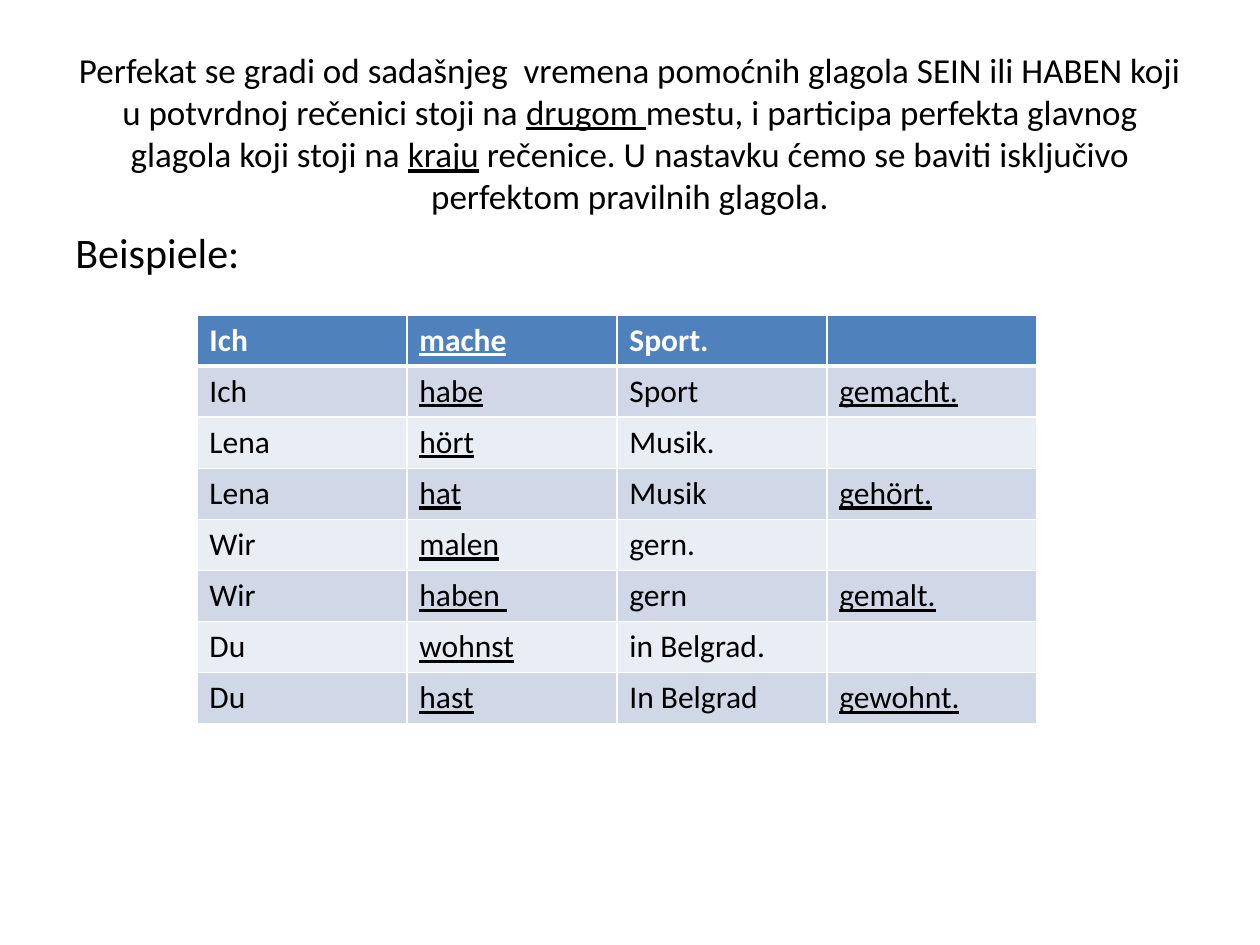
"""Build a slide on the German perfect tense with a table of examples."""
from dataclasses import dataclass

from lxml.etree import SubElement
from pptx import Presentation
from pptx.dml.color import RGBColor as RGB
from pptx.enum.text import MSO_ANCHOR as Anchor, MSO_AUTO_SIZE as AutoSize, PP_ALIGN as Align
from pptx.oxml.ns import qn
from pptx.util import Pt


@dataclass(frozen=True)
class Theme:
    font: str = "Calibri"
    black: RGB = RGB(0, 0, 0)
    white: RGB = RGB(255, 255, 255)
    header: RGB = RGB.from_string("4F81BD")
    bands: tuple = (RGB.from_string("E9EDF4"), RGB.from_string("D0D8E8"))
    title_size: Pt = Pt(20)
    label_size: Pt = Pt(24)
    cell_size: Pt = Pt(18)


THEME = Theme()


def set_font(p, size, color, bold=False):
    p.font.name, p.font.size, p.font.bold = THEME.font, size, bold
    p.font.color.rgb = color


def add_border(cell, side, width):
    ln = SubElement(cell._tc.get_or_add_tcPr(), qn(f"a:ln{side}"), w=str(Pt(width)))
    SubElement(SubElement(ln, qn("a:solidFill")), qn("a:srgbClr"), val=str(THEME.white))


prs = Presentation()
prs.slide_width, prs.slide_height = Pt(720), Pt(540)
s = prs.slides.add_slide(prs.slide_layouts[5])

title = s.shapes.title
title.left, title.top, title.width, title.height = Pt(36), Pt(21.6), Pt(648), Pt(108)
tf = title.text_frame
tf.word_wrap, tf.auto_size, tf.vertical_anchor = True, AutoSize.NONE, Anchor.MIDDLE
p = tf.paragraphs[0]
p.alignment = Align.CENTER
set_font(p, THEME.title_size, THEME.black)
title_runs = [
    ("Perfekat se gradi od sadašnjeg  vremena pomoćnih glagola SEIN ili HABEN koji "
     "u potvrdnoj rečenici stoji na ", False),
    ("drugom ", True),
    ("mestu, i participa perfekta glavnog glagola koji stoji na ", False),
    ("kraju", True),
    (" rečenice. U nastavku ćemo se baviti isključivo perfektom pravilnih glagola.", False),
]
for text, underline in title_runs:
    r = p.add_run()
    r.text, r.font.underline = text, underline

label = s.shapes.add_textbox(Pt(36), Pt(126), Pt(648), Pt(40))
tf = label.text_frame
tf.word_wrap = True
p = tf.paragraphs[0]
p.text = "Beispiele:"
set_font(p, THEME.label_size, THEME.black)

rows = [
    ("Ich", "mache", "Sport.", ""),
    ("Ich", "habe", "Sport", "gemacht."),
    ("Lena", "hört", "Musik.", ""),
    ("Lena", "hat", "Musik", "gehört."),
    ("Wir", "malen", "gern.", ""),
    ("Wir", "haben ", "gern", "gemalt."),
    ("Du", "wohnst", "in Belgrad.", ""),
    ("Du", "hast", "In Belgrad", "gewohnt."),
]
verb_columns = (1, 3)
col_width, row_height = 120, 29.2
table = s.shapes.add_table(len(rows), len(rows[0]), Pt(112.5), Pt(180),
                           Pt(col_width * len(rows[0])), Pt(row_height * len(rows))).table
for col in table.columns:
    col.width = Pt(col_width)
for i, row in enumerate(rows):
    table.rows[i].height = Pt(row_height)
    is_header = i == 0
    for j, text in enumerate(row):
        cell = table.cell(i, j)
        for side in "LRTB":
            thick = (i, side) in ((0, "B"), (1, "T"))
            add_border(cell, side, 3 if thick else 1)
        cell.fill.solid()
        cell.fill.fore_color.rgb = THEME.header if is_header else THEME.bands[i % 2]
        p = cell.text_frame.paragraphs[0]
        p.text = text
        set_font(p, THEME.cell_size, THEME.white if is_header else THEME.black, is_header)
        p.font.underline = j in verb_columns

prs.save("out.pptx")
